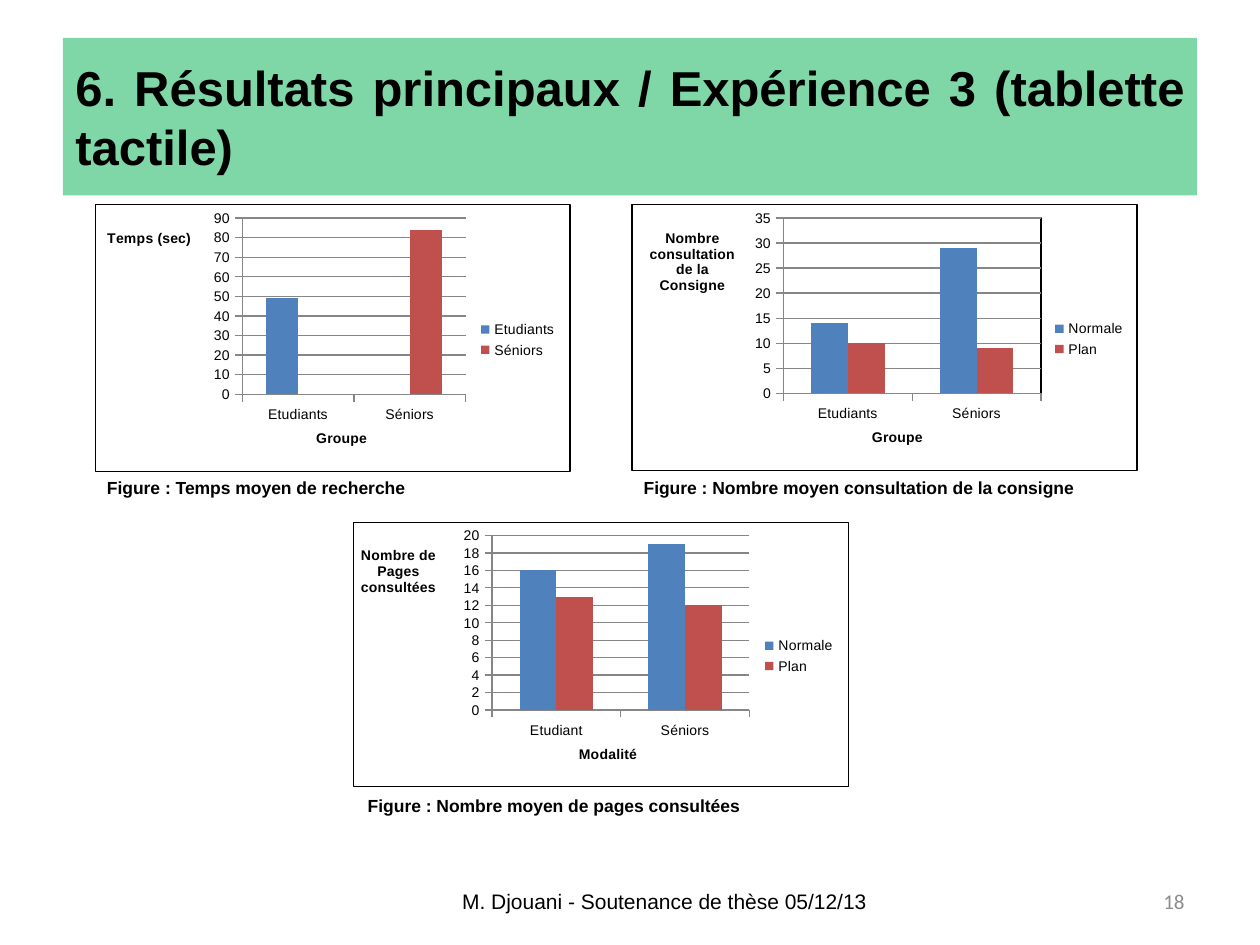
from dataclasses import dataclass

from lxml import etree
from pptx import Presentation
from pptx.chart.data import CategoryChartData
from pptx.dml.color import RGBColor
from pptx.enum.chart import XL_CHART_TYPE, XL_LEGEND_POSITION, XL_TICK_MARK
from pptx.enum.shapes import MSO_SHAPE
from pptx.enum.text import MSO_ANCHOR, PP_ALIGN
from pptx.oxml.ns import qn
from pptx.util import Inches, Pt

COLUMNS = XL_CHART_TYPE.COLUMN_CLUSTERED
LEGEND_RIGHT = XL_LEGEND_POSITION.RIGHT
TICK_OUT = XL_TICK_MARK.OUTSIDE
RECTANGLE = MSO_SHAPE.RECTANGLE
TOP, MIDDLE = MSO_ANCHOR.TOP, MSO_ANCHOR.MIDDLE
LEFT, CENTER = PP_ALIGN.LEFT, PP_ALIGN.CENTER
RIGHT, JUSTIFY = PP_ALIGN.RIGHT, PP_ALIGN.JUSTIFY


@dataclass(frozen=True)
class Theme:
    font: str = "Arial"
    number_font: str = "Calibri"
    ink: str = "000000"
    paper: str = "FFFFFF"
    muted: str = "8C8C8C"
    grid: str = "868686"
    banner: str = "00B050"
    series: tuple = ("4F81BD", "C0504D")
    title_size: int = 28
    footer_size: int = 12
    caption_size: int = 10
    chart_size: int = 8
    line_width: float = 0.75


THEME = Theme()


@dataclass(frozen=True)
class Figure:
    box: tuple
    caption_box: tuple
    caption: str
    value_title: str
    group_title: str
    groups: tuple
    series: dict
    scale: tuple  # maximum, major unit
    plot: tuple  # x, y, width, height as shares of the chart
    value_title_at: tuple
    group_title_at: tuple
    legend_at: tuple
    framed: bool = False


FIGURES = (
    Figure((5.01, 1.62, 4.02, 2.12), (5.01, 3.74, 4.02, 0.27),
           "Figure : Nombre moyen consultation de la consigne",
           "Nombre consultation de la Consigne", "Groupe",
           ("Etudiants", "Séniors"),
           {"Normale": (14, 29), "Plan": (10, 9)}, (35, 5),
           (0.3, 0.05, 0.51, 0.66), (0.03, 0.08), (0.47, 0.83),
           (0.83, 0.42, 0.15, 0.17), framed=True),
    Figure((0.75, 1.62, 3.78, 2.13), (0.75, 3.74, 3.78, 0.27),
           "Figure : Temps moyen de recherche",
           "Temps (sec)", "Groupe", ("Etudiants", "Séniors"),
           {"Etudiants": (49, None), "Séniors": (None, 84)}, (90, 10),
           (0.31, 0.05, 0.47, 0.66), (0.02, 0.08), (0.46, 0.83),
           (0.81, 0.42, 0.16, 0.17)),
    Figure((2.8, 4.14, 3.94, 2.11), (2.82, 6.26, 3.91, 0.27),
           "Figure : Nombre moyen de pages consultées",
           "Nombre de Pages consultées", "Modalité",
           ("Etudiant", "Séniors"),
           {"Normale": (16, 19), "Plan": (13, 12)}, (20, 2),
           (0.28, 0.05, 0.52, 0.66), (0.01, 0.08), (0.45, 0.83),
           (0.82, 0.42, 0.16, 0.17)),
)


def rgb(value):
    return RGBColor.from_string(value)


def style_font(font, size, color=THEME.ink, bold=False, name=THEME.font):
    font.name, font.size, font.bold = name, Pt(size), bold
    font.color.rgb = rgb(color)


def write(shape, text, *, align=LEFT, anchor=TOP, **font_format):
    frame = shape.text_frame
    frame.word_wrap = True
    frame.vertical_anchor = anchor
    paragraph = frame.paragraphs[0]
    paragraph.alignment = align
    run = paragraph.add_run()
    run.text = text
    style_font(run.font, **font_format)


def add_text(slide, box, text, **text_format):
    write(slide.shapes.add_textbox(*map(Inches, box)), text, **text_format)


def add_banner(slide, box, text):
    banner = slide.shapes.add_shape(RECTANGLE, *map(Inches, box))
    banner.shadow.inherit = False
    banner.line.fill.background()
    banner.fill.solid()
    banner.fill.fore_color.rgb = rgb(THEME.banner)
    # Half transparent fill
    color = next(banner.fill._xPr.iter(qn("a:srgbClr")))
    etree.SubElement(color, qn("a:alpha")).set("val", "50000")
    write(banner, text, align=JUSTIFY, anchor=MIDDLE,
          size=THEME.title_size, bold=True)


def place(part, index, position, inner=False):
    """Give a chart part a manual layout in shares of the chart."""
    for old in part.findall(qn("c:layout")):
        part.remove(old)
    layout = etree.Element(qn("c:layout"))
    manual = etree.SubElement(layout, qn("c:manualLayout"))
    settings = [("layoutTarget", "inner")] if inner else []
    settings += [("xMode", "edge"), ("yMode", "edge")]
    settings += zip("xywh", position)
    for tag, value in settings:
        etree.SubElement(manual, qn(f"c:{tag}")).set("val", str(value))
    part.insert(index, layout)


def add_solid_fill(parent, color):
    solid = etree.SubElement(parent, qn("a:solidFill"))
    etree.SubElement(solid, qn("a:srgbClr")).set("val", color)


def add_frame(part, index):
    """Give a chart part a paper fill and a thin outline."""
    properties = etree.Element(qn("c:spPr"))
    add_solid_fill(properties, THEME.paper)
    line = etree.SubElement(properties, qn("a:ln"))
    line.set("w", str(Pt(THEME.line_width)))
    add_solid_fill(line, THEME.ink)
    part.insert(index, properties)


def style_line(line):
    line.color.rgb = rgb(THEME.grid)
    line.width = Pt(THEME.line_width)


def style_axis(axis, title, position):
    axis.major_tick_mark = TICK_OUT
    style_line(axis.format.line)
    frame = axis.axis_title.text_frame
    frame.text = title
    style_font(frame.paragraphs[0].runs[0].font, THEME.chart_size, bold=True)
    frame._txBody.bodyPr.set("rot", "0")
    frame._txBody.bodyPr.set("vert", "horz")
    place(axis.axis_title._element, 1, position)


def add_figure(slide, figure):
    data = CategoryChartData()
    data.categories = figure.groups
    for name, values in figure.series.items():
        data.add_series(name, values)
    chart = slide.shapes.add_chart(COLUMNS, *map(Inches, figure.box), data).chart
    chart.has_title = False
    style_font(chart.font, THEME.chart_size)

    # Columns
    columns = chart.plots[0]
    columns.vary_by_categories = False
    columns.gap_width, columns.overlap = 150, 0
    for series, color in zip(columns.series, THEME.series):
        series.format.fill.solid()
        series.format.fill.fore_color.rgb = rgb(color)

    # Axes
    style_axis(chart.category_axis, figure.group_title, figure.group_title_at)
    value_axis = chart.value_axis
    style_axis(value_axis, figure.value_title, figure.value_title_at)
    value_axis.minimum_scale = 0
    value_axis.maximum_scale, value_axis.major_unit = figure.scale
    value_axis.has_major_gridlines = True
    style_line(value_axis.major_gridlines.format.line)

    # Legend, plot area and border
    chart.has_legend = True
    chart.legend.position = LEGEND_RIGHT
    chart.legend.include_in_layout = False
    place(chart.legend._element, 1, figure.legend_at)
    space = chart._chartSpace
    plot_area = space.chart.plotArea
    place(plot_area, 0, figure.plot, inner=True)
    if figure.framed:
        add_frame(plot_area, len(plot_area))
    add_frame(space, space.index(space.chart) + 1)

    add_text(slide, figure.caption_box, figure.caption,
             size=THEME.caption_size, bold=True)


def main():
    deck = Presentation()
    deck.slide_width, deck.slide_height = Inches(10), Inches(7.5)
    slide = deck.slides.add_slide(deck.slide_layouts[6])
    add_banner(slide, (0.5, 0.3, 9, 1.25),
               "6. Résultats principaux / Expérience 3 (tablette tactile)")
    for figure in FIGURES:
        add_figure(slide, figure)
    # Footer
    add_text(slide, (3.42, 6.95, 3.71, 0.4),
             "M. Djouani - Soutenance de thèse 05/12/13",
             align=CENTER, anchor=MIDDLE, size=THEME.footer_size)
    add_text(slide, (7.17, 6.95, 2.33, 0.4), "18", align=RIGHT, anchor=MIDDLE,
             size=THEME.footer_size, color=THEME.muted, name=THEME.number_font)
    deck.save("out.pptx")


if __name__ == "__main__":
    main()
